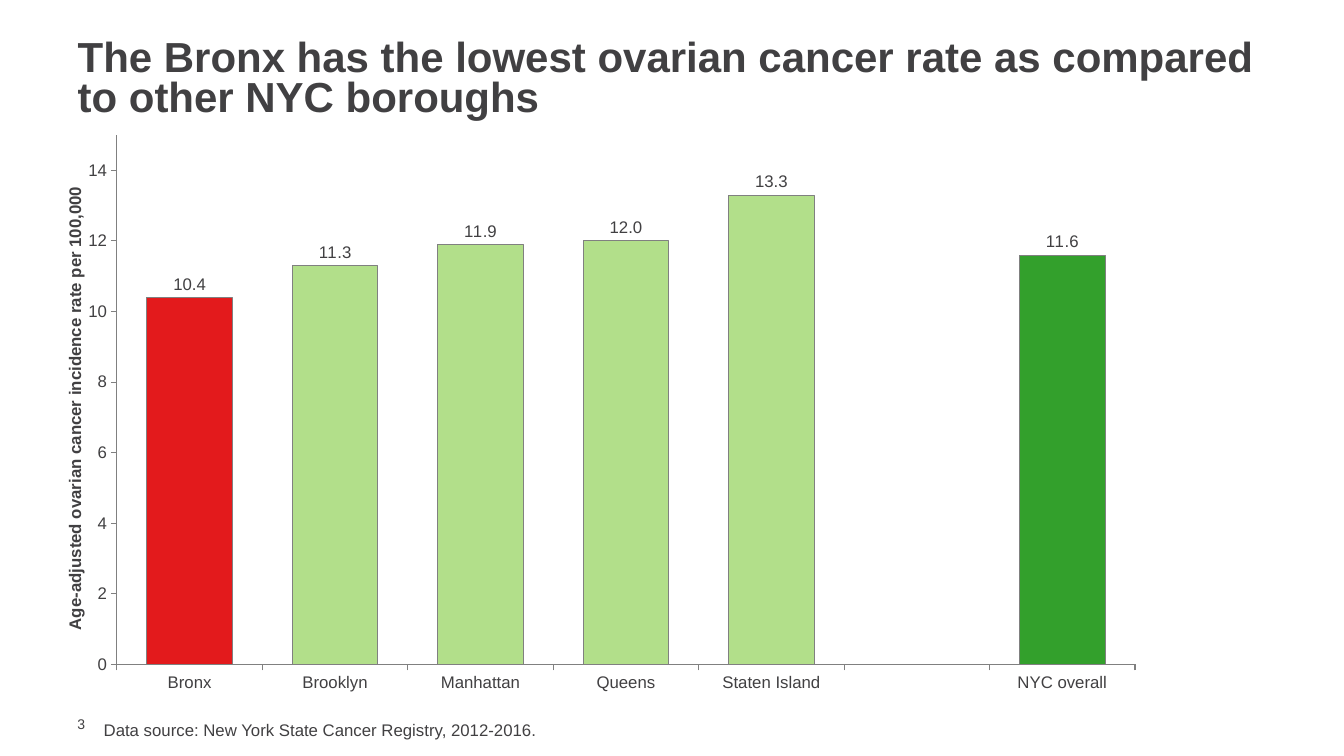
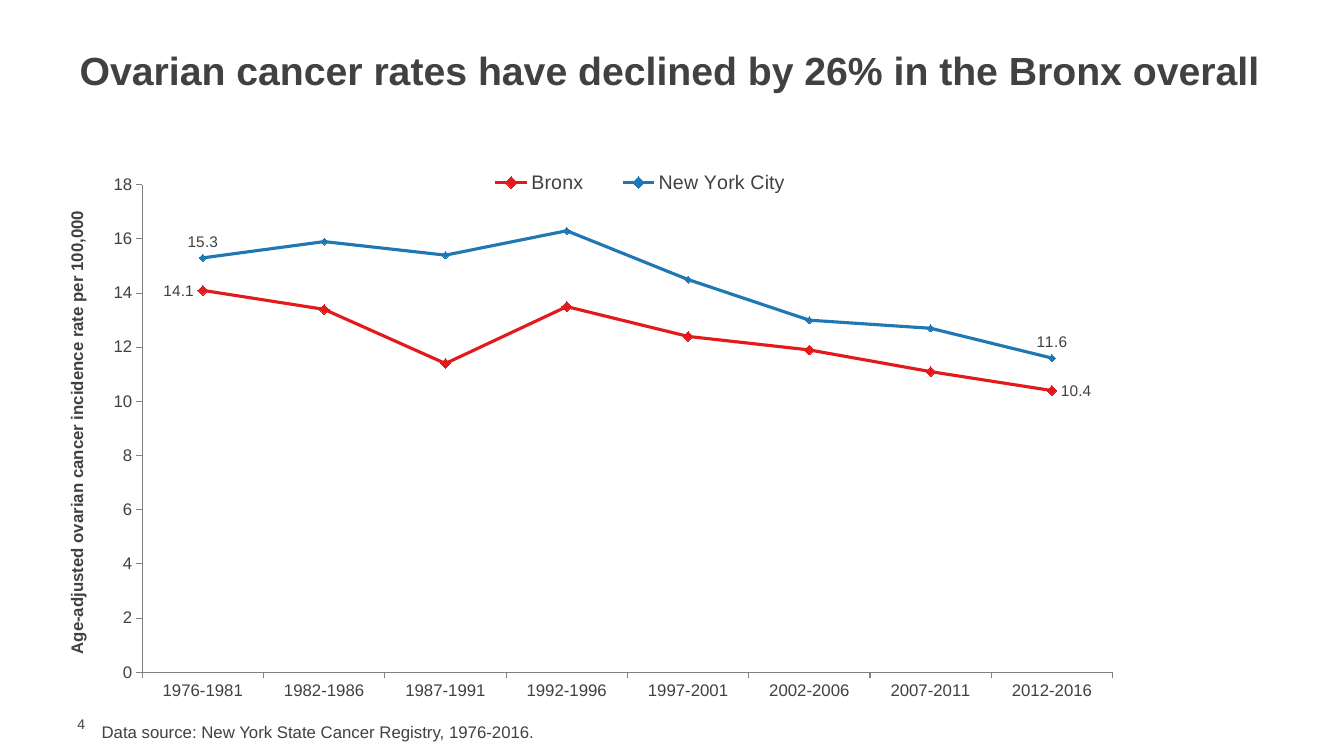
from lxml import etree
from pptx import Presentation
from pptx.chart.data import CategoryChartData
from pptx.dml.color import RGBColor
from pptx.enum.chart import (
    XL_CHART_TYPE as ChartType,
    XL_LABEL_POSITION as LabelPosition,
    XL_LEGEND_POSITION as LegendPosition,
    XL_MARKER_STYLE as MarkerStyle,
    XL_TICK_MARK as TickMark,
)
from pptx.enum.text import MSO_ANCHOR as Anchor, PP_ALIGN as Align
from pptx.oxml.ns import qn
from pptx.util import Inches, Pt

FONT = "Arial"
COLORS = {
    "text": "414042",
    "axis": "808080",
    "bronx": "E31A1C",
    "borough": "B2DF8A",
    "city": "33A02C",
    "city_line": "1F78B4",
}
RATE_TITLE = "Age-adjusted ovarian cancer incidence rate per 100,000"


def set_all(target, values):
    for name, value in values.items():
        setattr(target, name, value)


def color(name):
    return RGBColor.from_string(COLORS[name])


def set_layout(parent, index, inner=False, **fractions):
    """Place a chart part by fractions of the chart's width and height."""
    for old in parent.findall(qn("c:layout")):
        parent.remove(old)
    layout = etree.Element(qn("c:layout"))
    manual = etree.SubElement(layout, qn("c:manualLayout"))
    settings = {"layoutTarget": "inner"} if inner else {}
    settings.update({"xMode": "edge", "yMode": "edge"})
    settings.update(fractions)
    for name, value in settings.items():
        etree.SubElement(manual, qn(f"c:{name}")).set("val", str(value))
    parent.insert(index, layout)


class RateDeck:
    def __init__(self):
        self.deck = Presentation()
        self.deck.slide_width = Inches(13.33)
        self.deck.slide_height = Inches(7.5)
        self.page = None

    def style_font(self, font, size, bold=False):
        set_all(font, {"name": FONT, "size": Pt(size), "bold": bold})
        font.color.rgb = color("text")

    def style_line(self, line, color_name, width=0.75):
        line.color.rgb = color(color_name)
        line.width = Pt(width)

    def place(self, shape, left, top, width, height):
        set_all(shape, {"left": Inches(left), "top": Inches(top),
                        "width": Inches(width), "height": Inches(height)})

    def add_page(self, number):
        self.page = self.deck.slides.add_slide(self.deck.slide_layouts[5])
        frame = self.text(str(number), 10, 0.67, 7.1, 0.43, 0.17)
        set_all(frame, {"margin_top": 0, "margin_right": 0, "margin_bottom": 0,
                        "vertical_anchor": Anchor.MIDDLE})

    def title(self, text, size, left, top, width, height):
        title = self.page.shapes.title
        self.place(title, left, top, width, height)
        frame = title.text_frame
        set_all(frame, {"text": text, "word_wrap": True,
                        "vertical_anchor": Anchor.MIDDLE})
        para = frame.paragraphs[0]
        set_all(para, {"alignment": Align.LEFT, "line_spacing": 0.8})
        self.style_font(para.font, size, bold=True)

    def text(self, text, size, left, top, width, height):
        box = self.page.shapes.add_textbox(
            Inches(left), Inches(top), Inches(width), Inches(height))
        frame = box.text_frame
        set_all(frame, {"text": text, "word_wrap": True})
        self.style_font(frame.paragraphs[0].font, size)
        return frame

    def source(self, years, left, top):
        self.text(f"Data source: New York State Cancer Registry, {years}.",
                  12, left, top, 9.92, 0.3)

    def chart(self, kind, categories, series, place, plot, maximum, title_at):
        data = CategoryChartData()
        data.categories = categories
        for name, values in series.items():
            data.add_series(name, values)
        chart = self.page.shapes.add_chart(
            kind, *(Inches(length) for length in place), data).chart
        set_all(chart, {"has_title": False, "has_legend": False})
        self.style_font(chart.font, 10)
        chart.plots[0].vary_by_categories = False
        for axis in (chart.category_axis, chart.value_axis):
            set_all(axis, {"has_major_gridlines": False,
                           "major_tick_mark": TickMark.OUTSIDE,
                           "minor_tick_mark": TickMark.NONE})
            self.style_font(axis.tick_labels.font, 12)
            self.style_line(axis.format.line, "axis")
        self.rate_axis(chart.value_axis, maximum, title_at)
        x, y, w, h = plot
        set_layout(chart.element.find(".//" + qn("c:plotArea")), 0,
                   inner=True, x=x, y=y, w=w, h=h)
        return chart

    def rate_axis(self, axis, maximum, title_at):
        set_all(axis, {"minimum_scale": 0, "maximum_scale": maximum,
                       "major_unit": 2})
        set_all(axis.tick_labels,
                {"number_format": "0", "number_format_is_linked": False})
        frame = axis.axis_title.text_frame
        frame.text = RATE_TITLE
        self.style_font(frame.paragraphs[0].runs[0].font, 12, bold=True)
        x, y = title_at
        set_layout(axis.axis_title.element, 1, x=x, y=y)

    def column_chart(self, categories, values, point_colors, **options):
        chart = self.chart(ChartType.COLUMN_CLUSTERED, categories,
                           {"Series 1": values}, **options)
        plot = chart.plots[0]
        plot.gap_width = 70
        series = plot.series[0]
        formats = [(series.format, "borough")]
        formats += [(series.points[index].format, name)
                    for index, name in point_colors.items()]
        for format_, name in formats:
            format_.fill.solid()
            format_.fill.fore_color.rgb = color(name)
            self.style_line(format_.line, "axis")
        labels = series.data_labels
        set_all(labels, {"show_value": True, "number_format": "0.0",
                         "number_format_is_linked": False,
                         "position": LabelPosition.OUTSIDE_END})
        self.style_font(labels.font, 12)

    def line_chart(self, categories, series, styles, **options):
        """Draw lines whose styles give colour, marker size and end label sides."""
        chart = self.chart(ChartType.LINE_MARKERS, categories, series, **options)
        for line, style in zip(chart.plots[0].series, styles):
            color_name, marker_size, first_side, last_side = style
            line.smooth = False
            self.style_line(line.format.line, color_name, 2.25)
            marker = line.marker
            set_all(marker, {"style": MarkerStyle.DIAMOND, "size": marker_size})
            marker.format.fill.solid()
            marker.format.fill.fore_color.rgb = color(color_name)
            self.style_line(marker.format.line, color_name)
            line.data_labels.show_value = False
            for index, side in ((0, first_side), (len(categories) - 1, last_side)):
                label = line.points[index].data_label
                self.style_font(label.font, 11)
                label.position = side
        self.legend(chart)

    def legend(self, chart):
        chart.has_legend = True
        set_all(chart.legend, {"position": LegendPosition.TOP,
                               "include_in_layout": False})
        self.style_font(chart.legend.font, 14)
        set_layout(chart.element.find(".//" + qn("c:legend")), 1,
                   x=0.38, y=0.01, w=0.32, h=0.07)


def main():
    rates = RateDeck()

    rates.add_page(3)
    rates.title("The Bronx has the lowest ovarian cancer rate as compared "
                "to other NYC boroughs", 30, 0.67, 0.34, 12, 0.91)
    rates.column_chart(
        ["Bronx", "Brooklyn", "Manhattan", "Queens", "Staten Island", "",
         "NYC overall"],
        [10.4, 11.3, 11.9, 12, 13.3, None, 11.6],
        {0: "bronx", 6: "city"},
        place=(0.5, 1.25, 11, 5.72), plot=(0.06, 0.016, 0.918, 0.918),
        maximum=15, title_at=(0.01, 0.1))
    rates.source("2012-2016", 0.93, 7.09)

    rates.add_page(4)
    rates.title("Ovarian cancer rates have declined by 26% in the Bronx overall",
                28, 0.69, 0.5, 11.96, 0.48)
    rates.line_chart(
        ["1976-1981", "1982-1986", "1987-1991", "1992-1996", "1997-2001",
         "2002-2006", "2007-2011", "2012-2016"],
        {"Bronx": [14.1, 13.4, 11.4, 13.5, 12.4, 11.9, 11.1, 10.4],
         "New York City": [15.3, 15.9, 15.4, 16.3, 14.5, 13, 12.7, 11.6]},
        [("bronx", 7, LabelPosition.LEFT, LabelPosition.RIGHT),
         ("city_line", 5, LabelPosition.ABOVE, LabelPosition.ABOVE)],
        place=(0.41, 1.56, 11, 5.58), plot=(0.091, 0.049, 0.875, 0.867),
        maximum=18, title_at=(0.02, 0.09))
    rates.source("1976-2016", 0.91, 7.11)

    rates.deck.save("out.pptx")


if __name__ == "__main__":
    main()
